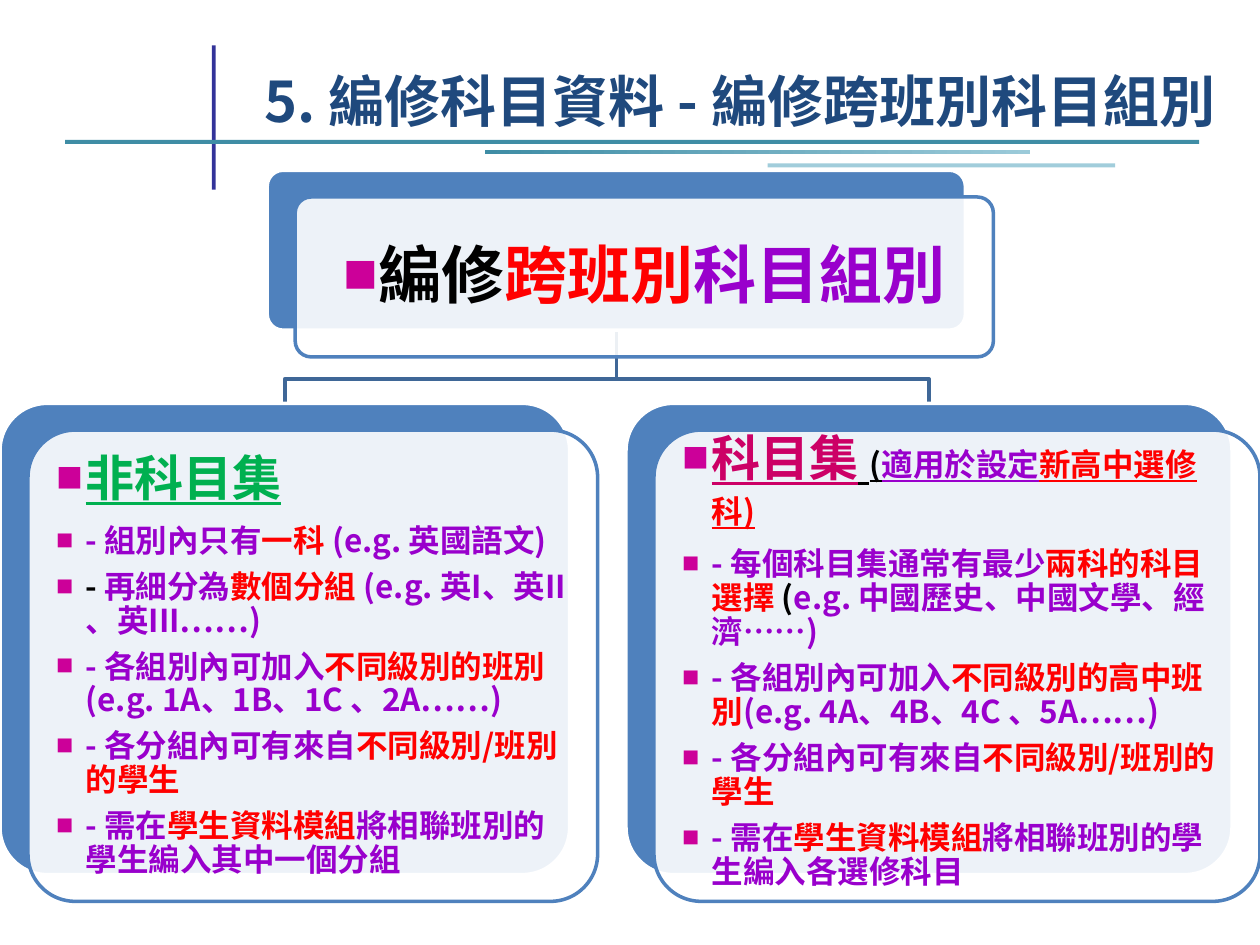
from dataclasses import dataclass

from lxml import etree
from pptx import Presentation
from pptx.dml.color import RGBColor
from pptx.enum.shapes import MSO_SHAPE
from pptx.enum.text import MSO_ANCHOR, MSO_AUTO_SIZE, PP_ALIGN
from pptx.oxml.ns import qn
from pptx.util import Pt

RECT, ROUND = MSO_SHAPE.RECTANGLE, MSO_SHAPE.ROUNDED_RECTANGLE
MIDDLE, BOTTOM = MSO_ANCHOR.MIDDLE, MSO_ANCHOR.BOTTOM
LEFT, CENTER = PP_ALIGN.LEFT, PP_ALIGN.CENTER
NO_FIT = MSO_AUTO_SIZE.NONE


@dataclass(frozen=True)
class Theme:
    """Colours, fonts and type sizes of the slide."""
    navy: str = "1F497D"
    indigo: str = "333399"
    teal: str = "3F8DA5"
    mist: str = "9BCAD9"
    pale: str = "A1CDDB"
    blue: str = "4F81BD"
    link: str = "3F6797"
    white: str = "FFFFFF"
    black: str = "000000"
    red: str = "FF0000"
    purple: str = "9900CC"
    green: str = "00B050"
    rose: str = "CC0066"
    bullet: str = "CC0099"
    cjk: str = "Noto Sans CJK TC"
    latin: str = "Cabin"
    title: int = 32
    root: int = 36
    head: int = 28
    body: int = 18


T = Theme()
HANG = 16.5
BODY_LINE = 19.4
STUDENTS = [("- 各分組內可有來自", T.purple), ("不同級別/班別的學生", T.red)]
MODULE = [("- 需在", T.purple), ("學生資料模組", T.red)]

ROOT = [("編修", T.black), ("跨班別", T.red), ("科目組別", T.purple)]
SINGLE_HEAD = [("非科目集", T.green, T.head)]
SINGLE = [
    [("- 組別內只有", T.purple), ("一科 ", T.red), ("(e.g. 英國語文)", T.purple)],
    [("- ", T.black), ("再細分為", T.purple), ("數個分組 ", T.red),
     ("(e.g. 英I、英II 、英III……)", T.purple)],
    [("- 各組別內可加入", T.purple), ("不同級別的班別 ", T.red),
     ("(e.g. 1A、1B、1C 、2A……)", T.purple)],
    STUDENTS,
    MODULE + [("將相聯班別的學生編入其中一個分組", T.purple)],
]
SET_HEAD = [("科目集", T.rose, T.head), (" ", T.black, T.head), ("(", T.black, T.body),
            ("適用於設定", T.purple, T.body), ("新高中選修科)", T.red, T.body)]
SET = [
    [("- 每個科目集通常有最少", T.purple), ("兩科的科目選擇 ", T.red), ("(", T.black),
     ("e.g. 中國歷史、中國文學、經濟……)", T.purple)],
    [("- 各組別內可加入", T.purple), ("不同級別的高中班別", T.red),
     ("(e.g. 4A、4B、4C 、5A……)", T.purple)],
    STUDENTS,
    MODULE + [("將相聯班別的學生編入各選修科目", T.purple)],
]


def rgb(code):
    """Return the colour for a hex code."""
    return RGBColor.from_string(code)


def add_run(p, text, color, size, font=T.cjk, underline=False):
    """Append one bold run to a paragraph."""
    r = p.add_run()
    r.text = text
    f = r.font
    f.size, f.bold, f.underline, f.name = Pt(size), True, underline, font
    f.color.rgb = rgb(color)
    ea = etree.SubElement(r._r.get_or_add_rPr(), qn("a:ea"))
    ea.set("typeface", T.cjk)


def add_bullet(p):
    """Give a paragraph a hanging square bullet."""
    pPr = p._p.get_or_add_pPr()
    pPr.set("marL", str(Pt(HANG)))
    pPr.set("indent", str(-Pt(HANG)))
    clr = etree.SubElement(pPr, qn("a:buClr"))
    etree.SubElement(clr, qn("a:srgbClr")).set("val", T.bullet)
    etree.SubElement(pPr, qn("a:buSzPct")).set("val", "55000")
    etree.SubElement(pPr, qn("a:buFont")).set("typeface", T.cjk)
    etree.SubElement(pPr, qn("a:buChar")).set("char", "■")


def start_item(p, line, after, align=LEFT):
    """Set the bullet, spacing and alignment of a paragraph."""
    add_bullet(p)
    p.alignment, p.line_spacing, p.space_after = align, Pt(line), Pt(after)


def add_box(s, kind, box, fill, line=None, alpha=None):
    """Add a flat preset shape in the given box."""
    sp = s.shapes.add_shape(kind, *map(Pt, box))
    sp.shadow.inherit = False
    sp.fill.solid()
    sp.fill.fore_color.rgb = rgb(fill)
    if alpha:
        clr = sp.fill._xPr.find(qn("a:solidFill"))[0]
        etree.SubElement(clr, qn("a:alpha")).set("val", str(alpha * 1000))
    if line:
        sp.line.color.rgb = rgb(line)
        sp.line.width = Pt(2)
    else:
        sp.line.fill.background()
    if kind == ROUND:
        sp.adjustments[0] = 0.1
    return sp


def add_card(s, box, pad, inset):
    """Add a card with an offset front panel and return its text frame."""
    x, y, w, h = box
    add_box(s, ROUND, box, T.blue, T.white)
    x, y = x + 16, y + 15.3
    add_box(s, ROUND, (x, y, w, h), T.white, T.blue, 90)
    area = x + pad, y + pad, w - 2 * pad, h - 2 * pad
    tf = s.shapes.add_textbox(*map(Pt, area)).text_frame
    tf.word_wrap, tf.auto_size, tf.vertical_anchor = True, NO_FIT, MIDDLE
    tf.margin_left = tf.margin_right = tf.margin_top = tf.margin_bottom = Pt(inset)
    return tf


def add_root(s, box):
    """Add the top card of the tree."""
    p = add_card(s, box, 2.7, 10.8).paragraphs[0]
    start_item(p, 39, 13.7, CENTER)
    for text, color in ROOT:
        add_run(p, text, color, T.root, T.latin)


def add_branch(s, box, head, head_line, items):
    """Add a lower card with an underlined heading and its items."""
    tf = add_card(s, box, 7.9, 8.6)
    p = tf.paragraphs[0]
    start_item(p, head_line, 10.6)
    for text, color, size in head:
        add_run(p, text, color, size, underline=True)
    for item in items:
        p = tf.add_paragraph()
        start_item(p, BODY_LINE, 6.8)
        for text, color in item:
            add_run(p, text, color, T.body)


def add_link(s, parent, child):
    """Draw an elbow line from the parent card to the child card."""
    x0, y0 = parent[0] + parent[2] / 2, parent[1] + parent[3]
    x1, y1 = child[0] + child[2] / 2, child[1]
    bend = y1 - 14
    fb = s.shapes.build_freeform(Pt(x0), Pt(y0))
    fb.add_line_segments([(Pt(x), Pt(y)) for x, y in
                          ((x0, bend), (x1, bend), (x1, y1))], close=False)
    sp = fb.convert_to_shape()
    sp.shadow.inherit = False
    sp.fill.background()
    sp.line.color.rgb = rgb(T.link)
    sp.line.width = Pt(2)


def add_header(s, box):
    """Add the rules and the title."""
    add_box(s, RECT, (121, 26, 2.3, 82.5), T.indigo)
    add_box(s, RECT, (37.3, 80, 648, 2.3), T.teal)
    sp = add_box(s, RECT, (277.2, 85.7, 311.5, 2.5), T.teal)
    sp.fill.gradient()
    sp.fill.gradient_angle = 0
    for stop, color, pos in zip(sp.fill.gradient_stops, (T.teal, T.mist), (0, 1)):
        stop.color.rgb, stop.position = rgb(color), pos
    add_box(s, RECT, (438.7, 93.4, 198.5, 2.3), T.pale)
    title = s.shapes.title
    title.left, title.top, title.width, title.height = map(Pt, box)
    tf = title.text_frame
    tf.word_wrap, tf.auto_size, tf.vertical_anchor = True, NO_FIT, BOTTOM
    p = tf.paragraphs[0]
    p.alignment, p.line_spacing = LEFT, Pt(39)
    add_run(p, "5. 編修科目資料 - 編修跨班別科目組別", T.navy, T.title)


def main():
    """Build and save the slide."""
    prs = Presentation()
    prs.slide_width, prs.slide_height = Pt(720), Pt(540)
    s = prs.slides.add_slide(prs.slide_layouts[5])
    add_header(s, (144, 20, 564, 60))
    root, single, group = ((152.7, 97.3, 399, 91.4), (0, 230.5, 325.5, 269.3),
                           (357.7, 230.5, 346.3, 269.3))
    for child in (group, single):
        add_link(s, root, child)
    add_root(s, root)
    add_branch(s, single, SINGLE_HEAD, 30, SINGLE)
    add_branch(s, group, SET_HEAD, 25, SET)
    prs.save("out.pptx")


if __name__ == "__main__":
    main()
